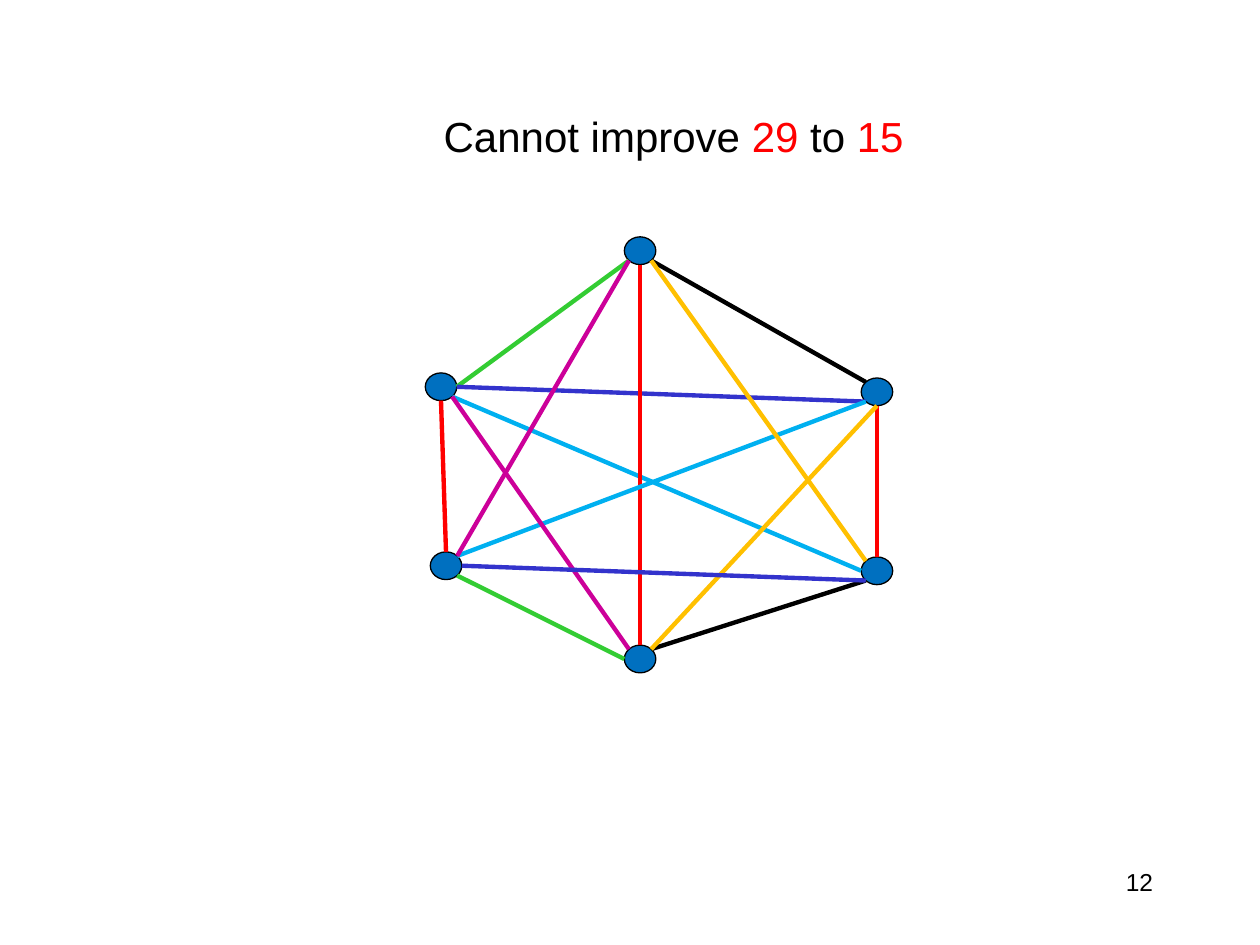
import math

import lxml.etree
import pptx
import pptx.dml.color
import pptx.enum.shapes
import pptx.enum.text
import pptx.oxml.ns
import pptx.util

Inches = pptx.util.Inches
Pt = pptx.util.Pt
RGB = pptx.dml.color.RGBColor.from_string
qn = pptx.oxml.ns.qn

COLORS = {
    "black": "000000", "red": "FF0000", "node": "0070C0", "sky": "00B0F0",
    "green": "33CC33", "indigo": "3333CC", "gold": "FFC000", "magenta": "CC0099",
}

deck = pptx.Presentation()
deck.slide_width, deck.slide_height = Inches(10), Inches(7.5)
slide = deck.slides.add_slide(deck.slide_layouts[6])


def add_text(box, runs, size, font, wrap):
    """Add a right-aligned, right-to-left line of (text, colour) runs."""
    frame = slide.shapes.add_textbox(*map(Inches, box)).text_frame
    frame.word_wrap = wrap
    paragraph = frame.paragraphs[0]
    paragraph.alignment = pptx.enum.text.PP_ALIGN.RIGHT
    paragraph._p.get_or_add_pPr().set("rtl", "1")
    for text, color in runs:
        run = paragraph.add_run()
        run.text = text
        for attribute, value in {"size": Pt(size), "name": font}.items():
            setattr(run.font, attribute, value)
        run.font.color.rgb = RGB(COLORS[color])
        complex_font = lxml.etree.SubElement(run._r.get_or_add_rPr(), qn("a:cs"))
        complex_font.set("typeface", "Arial")
    return frame


add_text((7.17, 6.83, 2.08, 0.5), [("12", "black")], 14, "Times New Roman", True)
title = add_text(
    (3.38, 0.83, 3.89, 0.5),
    [("Cannot improve ", "black"), ("29", "red"), (" to ", "black"), ("15", "red")],
    24, "Arial", False,
)
title.auto_size = pptx.enum.text.MSO_AUTO_SIZE.SHAPE_TO_FIT_TEXT

# Graph nodes, by centre
NODE_WIDTH, NODE_HEIGHT = 0.25, 0.22
centres = {
    "top": (5.08, 1.99), "bottom": (5.08, 5.23),
    "upper right": (6.96, 3.11), "lower right": (6.96, 4.53),
    "upper left": (3.5, 3.07), "lower left": (3.54, 4.49),
}
for x, y in centres.values():
    node = slide.shapes.add_shape(
        pptx.enum.shapes.MSO_SHAPE.OVAL,
        Inches(x - NODE_WIDTH / 2), Inches(y - NODE_HEIGHT / 2),
        Inches(NODE_WIDTH), Inches(NODE_HEIGHT),
    )
    node.shadow.inherit = False
    node.fill.solid()
    node.fill.fore_color.rgb = RGB(COLORS["node"])
    node.line.color.rgb = RGB(COLORS["black"])
    node.line.width = Pt(0.75)

# Each edge runs between compass points on the rims of two nodes
COMPASS = ["E", "SE", "S", "SW", "W", "NW", "N", "NE"]


def rim_point(node_name, direction):
    x, y = centres[node_name]
    angle = COMPASS.index(direction) * math.pi / 4
    return (Inches(x + NODE_WIDTH / 2 * math.cos(angle)),
            Inches(y + NODE_HEIGHT / 2 * math.sin(angle)))


edges = [
    ("top", "SE", "upper right", "NW", "black"),
    ("upper left", "SE", "lower right", "W", "sky"),
    ("bottom", "NE", "lower right", "SW", "black"),
    ("lower left", "SE", "bottom", "W", "green"),
    ("upper left", "E", "top", "SW", "green"),
    ("upper right", "S", "lower right", "N", "red"),
    ("upper left", "E", "upper right", "SW", "indigo"),
    ("top", "S", "bottom", "N", "red"),
    ("lower left", "NE", "upper right", "SW", "sky"),
    ("upper left", "S", "lower left", "N", "red"),
    ("bottom", "NE", "upper right", "S", "gold"),
    ("top", "SE", "lower right", "NW", "gold"),
    ("bottom", "NW", "upper left", "SE", "magenta"),
    ("top", "SW", "lower left", "NE", "magenta"),
    ("lower left", "E", "lower right", "SW", "indigo"),
]
for start, start_side, end, end_side, color in edges:
    edge = slide.shapes.add_connector(
        pptx.enum.shapes.MSO_CONNECTOR.STRAIGHT,
        *rim_point(start, start_side), *rim_point(end, end_side),
    )
    edge.line.color.rgb = RGB(COLORS[color])
    edge.line.width = Pt(2.5)
    lxml.etree.SubElement(edge._element.spPr, qn("a:effectLst"))

deck.save("out.pptx")
